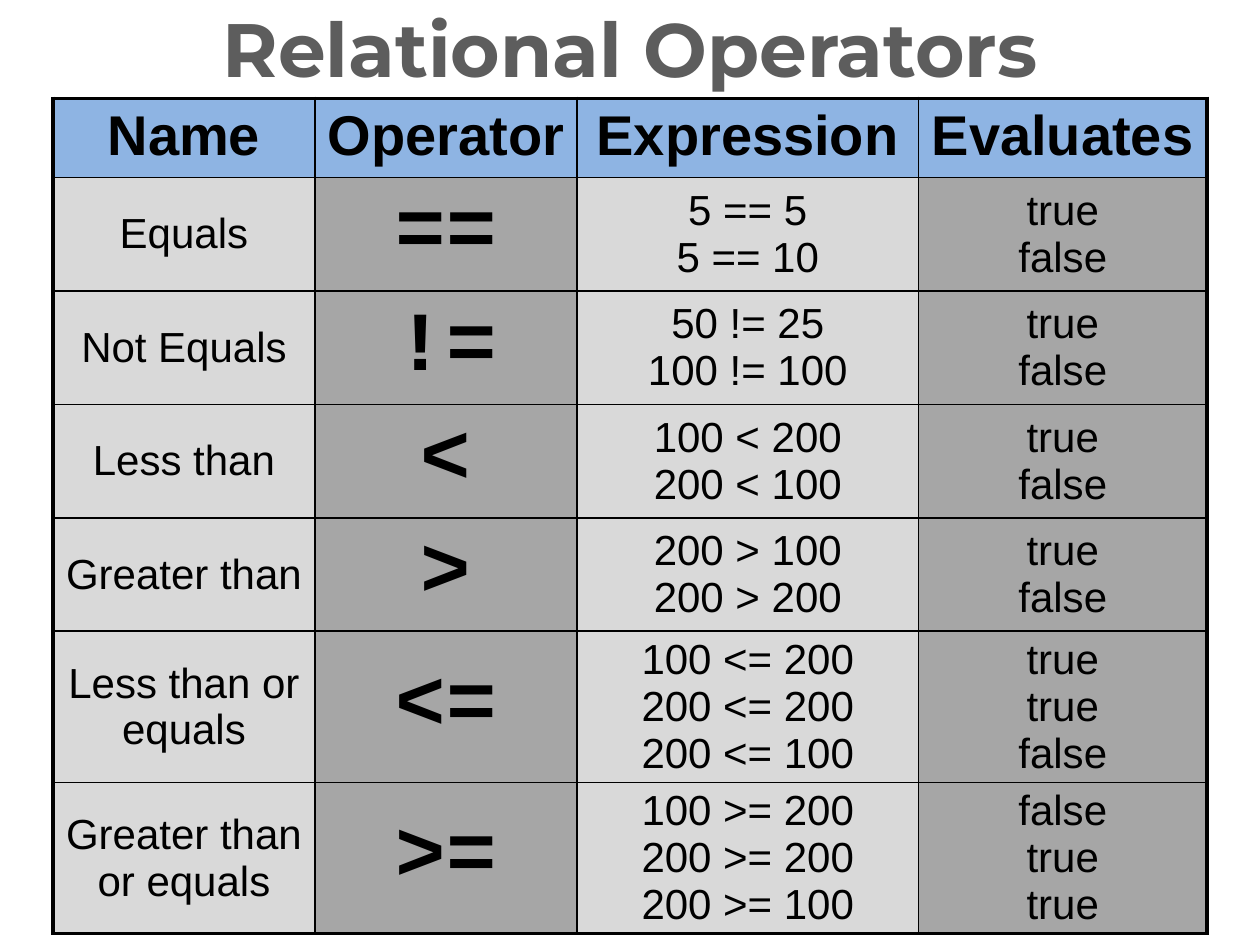
from lxml.etree import SubElement
from pptx import Presentation
from pptx.dml.color import RGBColor
from pptx.enum.text import MSO_ANCHOR, PP_ALIGN
from pptx.oxml.ns import qn
from pptx.util import Inches, Pt

TITLE = "Relational Operators"
HEADERS = ["Name", "Operator", "Expression", "Evaluates"]
OPERATORS = [
    ("Equals", "==", "5 == 5\n5 == 10", "true\nfalse"),
    ("Not Equals", "!=", "50 != 25\n100 != 100", "true\nfalse"),
    ("Less than", "<", "100 < 200\n200 < 100", "true\nfalse"),
    ("Greater than", ">", "200 > 100\n200 > 200", "true\nfalse"),
    ("Less than or equals", "<=", "100 <= 200\n200 <= 200\n200 <= 100", "true\ntrue\nfalse"),
    ("Greater than or equals", ">=", "100 >= 200\n200 >= 200\n200 >= 100", "false\ntrue\ntrue"),
]
COLUMN_WIDTHS = [2.08, 2.08, 2.71, 2.29]
ROW_HEIGHTS = [0.63, 0.9, 0.9, 0.9, 0.9, 1.2, 1.2]
COLUMN_MARGINS = [(0.1, 0.05), (0.1, 0.05), (0.07, 0), (0.07, 0)]

GRAY = RGBColor(0x5D, 0x5D, 0x5D)
BLACK = RGBColor(0, 0, 0)
HEADER_BLUE = RGBColor(0x8E, 0xB4, 0xE3)
LIGHT_GRAY = RGBColor(0xD9, 0xD9, 0xD9)
DARK_GRAY = RGBColor(0xA6, 0xA6, 0xA6)
INNER_BORDER, OUTER_BORDER = Pt(1), Pt(2.25)


def write_text(text_frame, text, font_name, size, bold, color):
    text_frame.text = text
    for paragraph in text_frame.paragraphs:
        paragraph.alignment = PP_ALIGN.CENTER
        for run in paragraph.runs:
            run.font.name = font_name
            run.font.size = Pt(size)
            run.font.bold = bold
            run.font.color.rgb = color


def set_borders(cell, outer_edges):
    properties = cell._tc.get_or_add_tcPr()
    for position, (tag, is_outer) in enumerate(outer_edges.items()):
        width = OUTER_BORDER if is_outer else INNER_BORDER
        line = SubElement(properties, qn(f"a:{tag}"), w=str(width))
        fill = SubElement(line, qn("a:solidFill"))
        SubElement(fill, qn("a:srgbClr"), val=str(BLACK))
        properties.insert(position, line)


def format_cell(cell, text, row, column):
    is_header = row == 0
    is_operator = column == 1 and not is_header
    horizontal, vertical = COLUMN_MARGINS[0 if is_header else column]
    cell.margin_left = cell.margin_right = Inches(horizontal)
    cell.margin_top = cell.margin_bottom = Inches(vertical)
    cell.vertical_anchor = MSO_ANCHOR.TOP if is_header else MSO_ANCHOR.MIDDLE
    write_text(
        cell.text_frame,
        text,
        "Courier New" if is_operator else "Arial",
        32 if is_header else 48 if is_operator else 24,
        is_header or is_operator,
        BLACK,
    )
    cell.fill.solid()
    body_color = DARK_GRAY if column % 2 else LIGHT_GRAY
    cell.fill.fore_color.rgb = HEADER_BLUE if is_header else body_color
    set_borders(cell, {
        "lnL": column == 0,
        "lnR": column == len(HEADERS) - 1,
        "lnT": is_header,
        "lnB": row == len(OPERATORS),
    })


def main():
    presentation = Presentation()
    presentation.slide_width = Inches(10)
    presentation.slide_height = Inches(7.5)
    slide = presentation.slides.add_slide(presentation.slide_layouts[5])

    title = slide.shapes.title
    title.left, title.top = Inches(0), Inches(0)
    title.width, title.height = Inches(10), Inches(0.75)
    title.text_frame.vertical_anchor = MSO_ANCHOR.MIDDLE
    write_text(title.text_frame, TITLE, "Montserrat", 43.2, True, GRAY)

    rows = [HEADERS, *OPERATORS]
    table = slide.shapes.add_table(
        len(rows), len(HEADERS), Inches(0.42), Inches(0.78),
        Inches(sum(COLUMN_WIDTHS)), Inches(sum(ROW_HEIGHTS)),
    ).table
    for column, width in zip(table.columns, COLUMN_WIDTHS):
        column.width = Inches(width)
    for row, height in zip(table.rows, ROW_HEIGHTS):
        row.height = Inches(height)
    for row_index, row in enumerate(rows):
        for column_index, text in enumerate(row):
            format_cell(table.cell(row_index, column_index), text, row_index, column_index)

    presentation.save("out.pptx")


if __name__ == "__main__":
    main()
